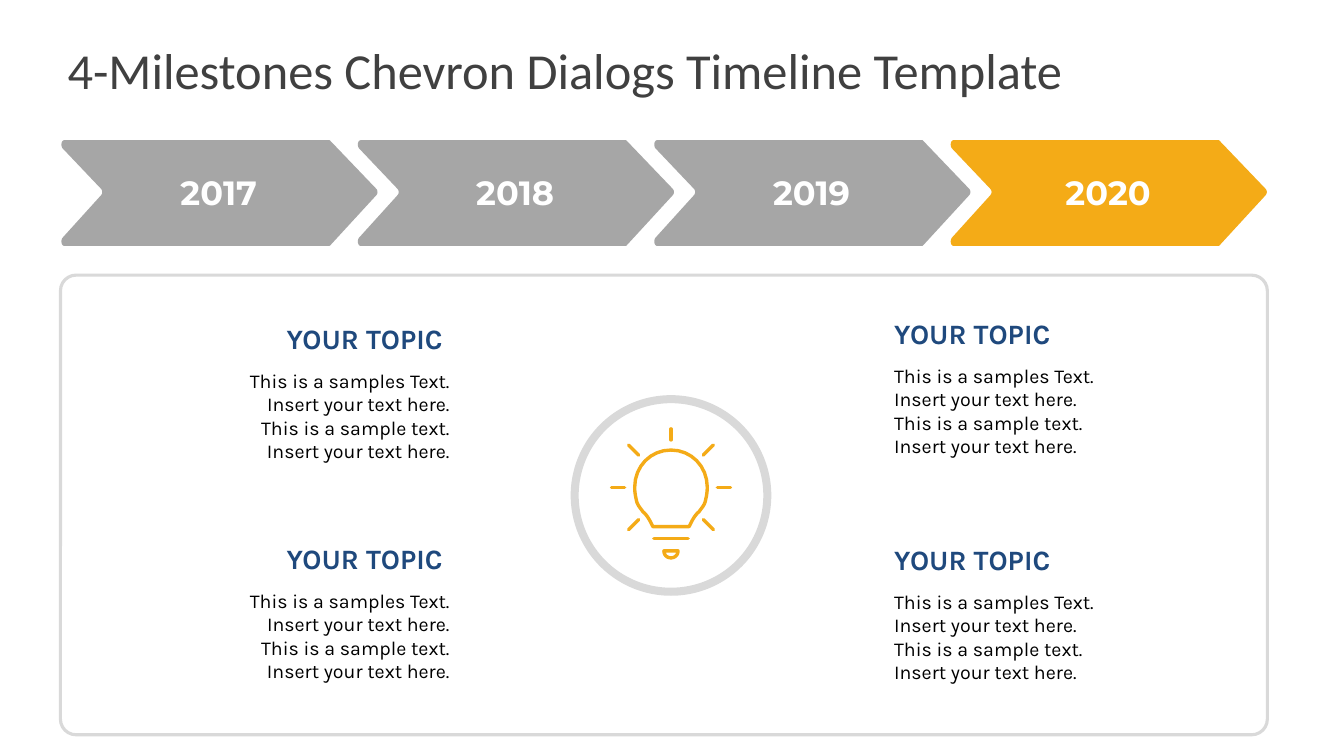
from pptx import Presentation
from pptx.dml.color import RGBColor
from pptx.enum.shapes import MSO_CONNECTOR, MSO_SHAPE
from pptx.enum.text import MSO_ANCHOR, MSO_AUTO_SIZE, PP_ALIGN
from pptx.oxml.ns import qn
from pptx.util import Inches, Pt
from lxml import etree

LEFT, RIGHT, CENTER = PP_ALIGN.LEFT, PP_ALIGN.RIGHT, PP_ALIGN.CENTER
TOP, MIDDLE, BOTTOM = MSO_ANCHOR.TOP, MSO_ANCHOR.MIDDLE, MSO_ANCHOR.BOTTOM
GROW = MSO_AUTO_SIZE.SHAPE_TO_FIT_TEXT
STRAIGHT = MSO_CONNECTOR.STRAIGHT
PANEL, OVAL, DONUT = MSO_SHAPE.ROUNDED_RECTANGLE, MSO_SHAPE.OVAL, MSO_SHAPE.DONUT

COLORS = {"title": "404040", "gray": "A6A6A6", "gold": "F4AB17", "rim": "D9D9D9",
          "topic": "1F497D", "body": "000000", "white": "FFFFFF"}
BODY = ("This is a samples Text. Insert your text here. "
        "This is a sample text. Insert your text here.")
CHEVRON = [(0.4, 0.48), (0.02, 0.08), (0, 0.05, 0.01, 0, 0.04, 0), (2.66, 0),
           (2.67, 0, 2.67, 0, 2.68, 0.01), (3.13, 0.48),
           (3.15, 0.5, 3.15, 0.53, 3.13, 0.55), (2.68, 1.04),
           (2.67, 1.05, 2.67, 1.05, 2.66, 1.05), (0.04, 1.05),
           (0.01, 1.05, 0, 1, 0.02, 0.97), (0.4, 0.55),
           (0.42, 0.53, 0.42, 0.5, 0.4, 0.48)]
BULB = [(-0.18, 0.31), (-0.2, 0.27, -0.23, 0.2, -0.28, 0.16),
        (-0.3, 0.13, -0.33, 0.1, -0.34, 0.06),
        (-0.35, 0.02, -0.36, -0.03, -0.36, -0.08),
        (-0.36, -0.29, -0.2, -0.45, 0, -0.45)]
CUP = [(-0.07, 0.55), (-0.07, 0.59, -0.04, 0.62, 0, 0.62)]
RAYS = [(0, -0.66, 0, -0.55), (-0.17, 0.43, 0.17, 0.43)] + [
    ray for s in (-1, 1) for ray in ((s * 0.46, -0.08, s * 0.59, -0.08),
                                     (s * 0.32, -0.4, s * 0.42, -0.5),
                                     (s * 0.32, 0.24, s * 0.42, 0.34))]


def color(key):
    """Return the named colour."""
    return RGBColor.from_string(COLORS[key])


def paint(shape, fill=None, line=None, width=0):
    """Set fill and line, each left off when not named."""
    shape.shadow.inherit = False
    if fill:
        shape.fill.solid()
        shape.fill.fore_color.rgb = color(fill)
    else:
        shape.fill.background()
    if line:
        shape.line.color.rgb = color(line)
        shape.line.width = Pt(width)
    else:
        shape.line.fill.background()


def trace(path, steps=8):
    """Turn line ends and Bezier triples into a list of points."""
    points = []
    for part in path:
        if len(part) == 2:
            points.append(part)
            continue
        a, b, c, d = points[-1], part[:2], part[2:4], part[4:]
        for i in range(1, steps + 1):
            t = i / steps
            u = 1 - t
            points.append(tuple(u**3 * a[k] + 3 * u * u * t * b[k]
                                + 3 * u * t * t * c[k] + t**3 * d[k] for k in (0, 1)))
    return points


def outline(shapes, x, y, points):
    """Draw a closed outline offset to x, y."""
    ends = [(Inches(x + dx), Inches(y + dy)) for dx, dy in points]
    form = shapes.build_freeform(*ends[0])
    form.add_line_segments(ends[1:], close=True)
    return form.convert_to_shape()


def label(shapes, box, text, size, font, tone, bold=False, align=LEFT,
          anchor=TOP, wrap=False):
    """Place one line or block of text in a box."""
    frame = shapes.add_textbox(*map(Inches, box)).text_frame
    frame.word_wrap = wrap
    frame.auto_size = GROW
    frame.vertical_anchor = anchor
    style(frame, text, size, font, tone, bold, align)


def style(frame, text, size, font, tone, bold=False, align=LEFT):
    """Fill a text frame and format its run."""
    frame.text = text
    para = frame.paragraphs[0]
    para.alignment = align
    face = para.runs[0].font
    face.size, face.name, face.bold = Pt(size), font, bold
    face.color.rgb = color(tone)


def heading(slide, x, y, w, h):
    """Place the slide title."""
    title = slide.shapes.title
    title.left, title.top, title.width, title.height = map(Inches, (x, y, w, h))
    frame = title.text_frame
    frame.margin_left = frame.margin_right = frame.margin_top = frame.margin_bottom = 0
    frame.vertical_anchor = MIDDLE
    style(frame, "4-Milestones Chevron Dialogs Timeline Template", 36, "Calibri", "title")


def timeline(slide, x, y, step, years):
    """Draw the row of chevrons, the last one gold."""
    points = trace(CHEVRON)
    for i, year in enumerate(years):
        arrow = outline(slide.shapes, x + i * step, y, points)
        paint(arrow, "gold" if year == years[-1] else "gray")
    for i, year in enumerate(years):
        label(slide.shapes, (x + i * step + 1.02, y + 0.27, 1.1, 0.5), year, 24,
              "Montserrat", "white", True, CENTER, MIDDLE)


def panel(slide, x, y, w, h):
    """Draw the rounded frame."""
    frame = slide.shapes.add_shape(PANEL, *map(Inches, (x, y, w, h)))
    frame.adjustments[0] = 0.034
    paint(frame, line="rim", width=2.25)


def topic(slide, x, y, align):
    """Place a topic head and its text in a box 2.36 wide."""
    shapes = slide.shapes.add_group_shape().shapes
    right = align == RIGHT
    label(shapes, (x + 0.44 * right, y, 1.92, 0.44), "YOUR TOPIC " if right else "YOUR TOPIC",
          20, "Karla", "topic", True, align, BOTTOM)
    label(shapes, (x, y + 0.48, 2.36, 1.04), BODY, 14, "Karla", "body",
          align=align, wrap=True)


def badge(slide, x, y, size):
    """Draw the ringed light bulb."""
    disc = slide.shapes.add_shape(OVAL, *map(Inches, (x + 0.04, y + 0.04, size - 0.08, size - 0.08)))
    paint(disc, "white")
    ring = slide.shapes.add_shape(DONUT, *map(Inches, (x, y, size, size)))
    ring.adjustments[0] = 0.04
    paint(ring, "rim")
    shapes = slide.shapes.add_group_shape().shapes
    cx, cy = x + size / 2, y + size / 2
    for path in (BULB, CUP):
        half = trace(path)
        glass = outline(shapes, cx, cy, half + [(-dx, dy) for dx, dy in half[-2::-1]])
        paint(glass, line="gold", width=2.4)
    for x1, y1, x2, y2 in RAYS:
        ray = shapes.add_connector(STRAIGHT, *map(Inches, (cx + x1, cy + y1, cx + x2, cy + y2)))
        ray.line.color.rgb = color("gold")
        ray.line.width = Pt(2.4)
        props = ray._element.spPr
        props.find(qn("a:ln")).set("cap", "rnd")
        etree.SubElement(props, qn("a:effectLst"))


def main():
    """Build and save the slide."""
    deck = Presentation()
    deck.slide_width, deck.slide_height = Inches(13.33), Inches(7.5)
    slide = deck.slides.add_slide(deck.slide_layouts[5])
    panel(slide, 0.6, 2.73, 11.97, 4.56)
    heading(slide, 0.67, 0.3, 12, 0.78)
    timeline(slide, 0.6, 1.39, 2.94, ["2017", "2018", "2019", "2020"])
    for x, y, align in ((8.77, 3.08, LEFT), (8.77, 5.32, LEFT),
                        (2.2, 5.31, RIGHT), (2.2, 3.13, RIGHT)):
        topic(slide, x, y, align)
    badge(slide, 5.66, 3.92, 1.99)
    deck.save("out.pptx")


if __name__ == "__main__":
    main()
